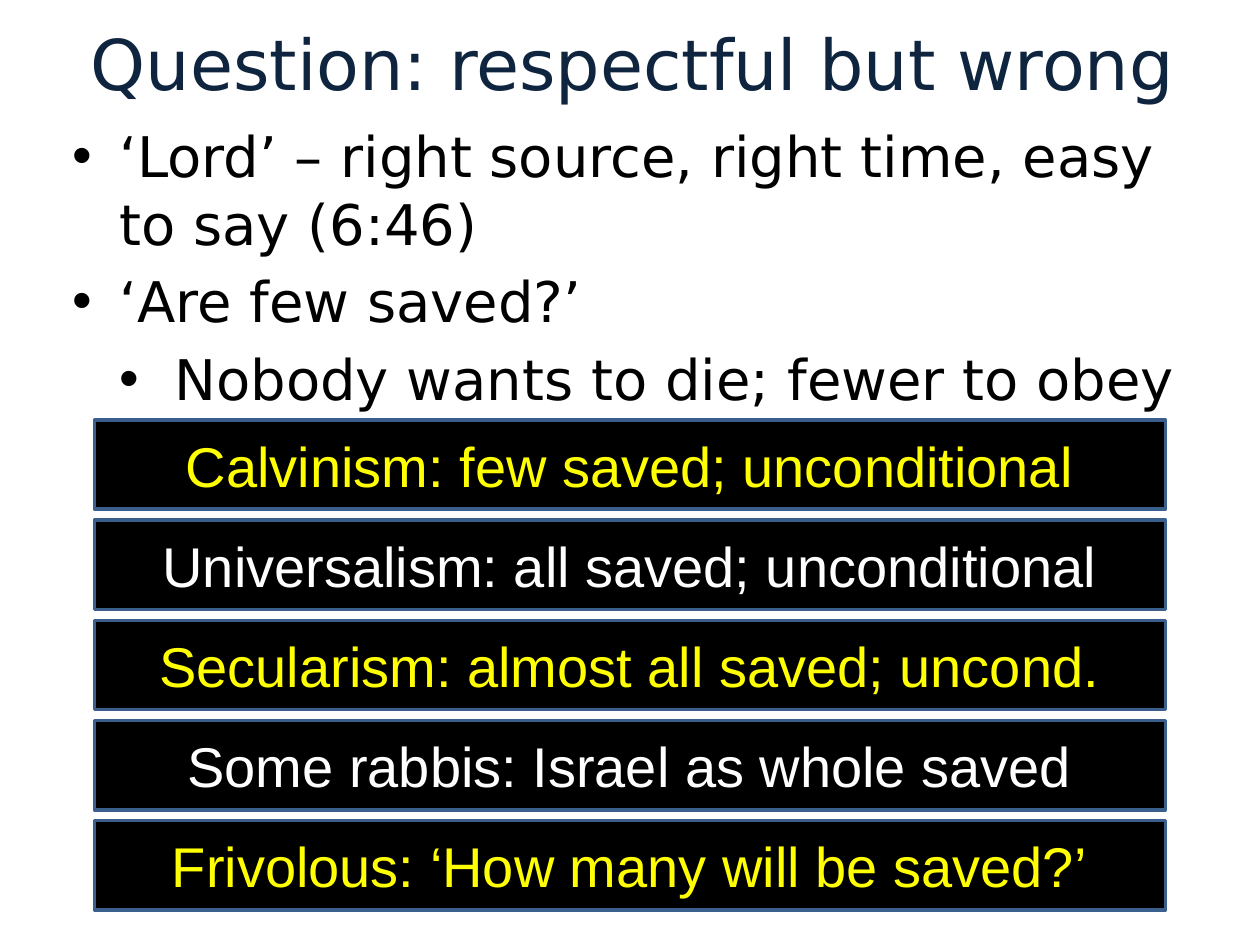
from dataclasses import dataclass

from lxml.etree import SubElement
from pptx import Presentation
from pptx.dml.color import RGBColor
from pptx.enum.shapes import MSO_SHAPE as Shape
from pptx.enum.text import MSO_ANCHOR as Anchor, MSO_AUTO_SIZE as AutoSize, PP_ALIGN as Align
from pptx.oxml.ns import qn
from pptx.util import Pt

COLORS = {
    "title": "0F243E",
    "body": "000000",
    "panel": "000000",
    "border": "3A5F8C",
    "odd": "FFFF00",
    "even": "FFFFFF",
}
HEADING_FONT = "DejaVu Sans"
PANEL_FONT = "Arial"
PANEL_LEFT, PANEL_TOP = 54, 240
PANEL_WIDTH, PANEL_HEIGHT, PANEL_PITCH = 612, 51, 57.25


@dataclass(frozen=True)
class Bullet:
    text: str
    level: int
    margin: float
    hanging: float
    before: float
    after: float


BULLETS = [
    Bullet("‘Lord’ – right source, right time, easy to say (6:46)", 0, 27, 27, 0, 0),
    Bullet("‘Are few saved?’", 0, 27, 27, 6, 0),
    Bullet("Nobody wants to die; fewer to obey", 1, 58.5, 31.5, 6, 6),
]
VIEWS = [
    "Calvinism: few saved; unconditional",
    "Universalism: all saved; unconditional",
    "Secularism: almost all saved; uncond.",
    "Some rabbis: Israel as whole saved",
    "Frivolous: ‘How many will be saved?’",
]


def color(name: str) -> RGBColor:
    return RGBColor.from_string(COLORS[name])


def place(box, left: float, top: float, width: float, height: float) -> None:
    box.left, box.top, box.width, box.height = map(Pt, (left, top, width, height))


def style_runs(para, font_name: str, size: float, color_name: str) -> None:
    for span in para.runs:
        span.font.name = font_name
        span.font.size = Pt(size)
        span.font.color.rgb = color(color_name)


def write_title(box, text: str) -> None:
    place(box, 1.5, 1.5, 720, 68.5)
    frame = box.text_frame
    frame.text = text
    frame.auto_size = AutoSize.NONE
    frame.vertical_anchor = Anchor.MIDDLE
    para = frame.paragraphs[0]
    para.alignment = Align.CENTER
    style_runs(para, HEADING_FONT, 40, "title")


def format_bullet(para, bullet: Bullet) -> None:
    para.level = bullet.level
    para.space_before = Pt(bullet.before)
    para.space_after = Pt(bullet.after)
    properties = para._p.get_or_add_pPr()
    properties.set("marL", str(Pt(bullet.margin)))
    properties.set("indent", str(-Pt(bullet.hanging)))
    SubElement(properties, qn("a:buFont"), typeface="Arial")
    SubElement(properties, qn("a:buChar"), char="•")
    style_runs(para, HEADING_FONT, 32, "body")


def write_bullets(box, bullets: list[Bullet]) -> None:
    place(box, 34, 66, 653.5, 454)
    frame = box.text_frame
    frame.text = "\n".join(bullet.text for bullet in bullets)
    frame.auto_size = AutoSize.NONE
    for para, bullet in zip(frame.paragraphs, bullets):
        format_bullet(para, bullet)


def draw_panel(page, index: int, text: str) -> None:
    top = PANEL_TOP + index * PANEL_PITCH
    box = page.shapes.add_shape(
        Shape.RECTANGLE, Pt(PANEL_LEFT), Pt(top), Pt(PANEL_WIDTH), Pt(PANEL_HEIGHT)
    )
    box.shadow.inherit = False
    box.fill.solid()
    box.fill.fore_color.rgb = color("panel")
    box.line.color.rgb = color("border")
    box.line.width = Pt(2)
    frame = box.text_frame
    frame.text = text
    frame.word_wrap = True
    frame.vertical_anchor = Anchor.MIDDLE
    para = frame.paragraphs[0]
    para.alignment = Align.CENTER
    style_runs(para, PANEL_FONT, 32, "even" if index % 2 else "odd")


def main() -> None:
    deck = Presentation()
    deck.slide_width, deck.slide_height = Pt(720), Pt(540)
    page = deck.slides.add_slide(deck.slide_layouts[1])
    write_title(page.shapes.title, "Question: respectful but wrong")
    write_bullets(page.placeholders[1], BULLETS)
    for index, view in enumerate(VIEWS):
        draw_panel(page, index, view)
    deck.save("out.pptx")


if __name__ == "__main__":
    main()
